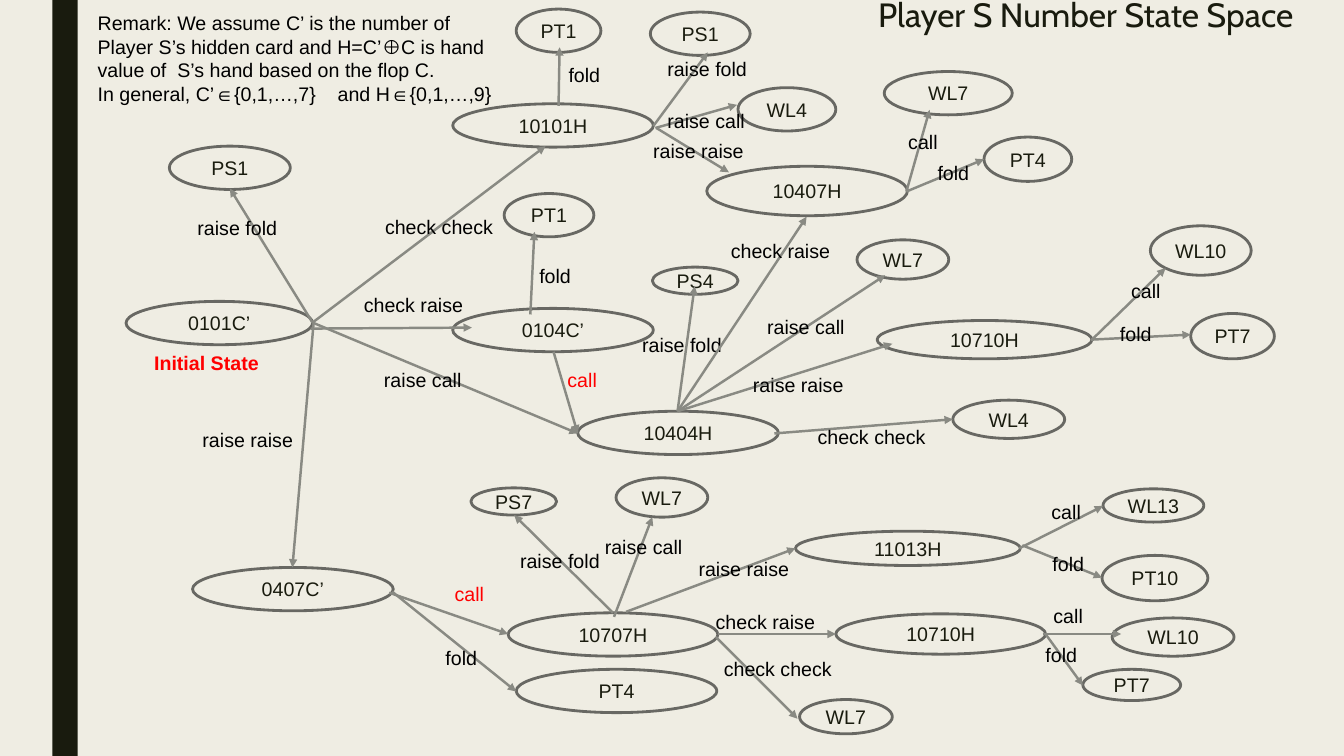
from pptx import Presentation
from pptx.dml.color import RGBColor
from pptx.enum.shapes import MSO_CONNECTOR, MSO_SHAPE
from pptx.enum.text import MSO_ANCHOR, MSO_AUTO_SIZE, PP_ALIGN
from pptx.oxml.ns import qn
from pptx.util import Inches, Pt
from lxml import etree

ELLIPSE, RECTANGLE = MSO_SHAPE.OVAL, MSO_SHAPE.RECTANGLE
STRAIGHT = MSO_CONNECTOR.STRAIGHT
TOP, MIDDLE = MSO_ANCHOR.TOP, MSO_ANCHOR.MIDDLE
LEFT, CENTER = PP_ALIGN.LEFT, PP_ALIGN.CENTER
NO_AUTOFIT = MSO_AUTO_SIZE.NONE
DARK, BLACK, RED = "191B0E", "000000", "FF0000"
OUTLINE, ARROW, BACKGROUND = "686863", "898A83", "EFEDE3"


def color(hex_string):
    return RGBColor.from_string(hex_string)


def write(shape, lines, font_color, alignment=LEFT, bold=False):
    """Fill a shape with 14 pt Arial paragraphs that do not wrap."""
    frame = shape.text_frame
    frame.word_wrap = False
    frame.text = "\n".join(lines)
    for paragraph in frame.paragraphs:
        paragraph.alignment = alignment
        paragraph.font.name = "Arial"
        paragraph.font.size = Pt(14)
        paragraph.font.bold = bold
        paragraph.font.color.rgb = color(font_color)


presentation = Presentation()
presentation.slide_width = Inches(13.33)
presentation.slide_height = Inches(7.5)
slide = presentation.slides.add_slide(presentation.slide_layouts[5])
slide.background.fill.solid()
slide.background.fill.fore_color.rgb = color(BACKGROUND)
shapes = slide.shapes

# Side bar
bar = shapes.add_shape(RECTANGLE, Inches(0.52), 0, Inches(0.25), Inches(7.5))
bar.shadow.inherit = False
bar.fill.solid()
bar.fill.fore_color.rgb = color(DARK)
bar.line.fill.background()

# Title
title = shapes.title
title.left, title.top = Inches(8.61), Inches(-0.06)
title.width, title.height = Inches(4.82), Inches(0.67)
title.text_frame.text = "Player S Number State Space"
title.text_frame.vertical_anchor = TOP
title.text_frame.auto_size = NO_AUTOFIT
heading = title.text_frame.paragraphs[0]
heading.alignment = LEFT
heading.line_spacing = 0.89
heading.font.name = "Cabin"
heading.font.size = Pt(24)
heading.font.color.rgb = color(DARK)

# States: name, left, top, width, height
states = [
    ("0101C’", 1.25, 2.99, 1.85, 0.43),
    ("PS1", 1.68, 1.45, 1.2, 0.43),
    ("10101H", 4.49, 1.03, 1.99, 0.43),
    ("0104C’", 4.49, 3.06, 1.99, 0.43),
    ("10404H", 5.73, 4.08, 1.99, 0.43),
    ("0407C’", 1.91, 5.63, 1.99, 0.43),
    ("PT1", 5, 1.92, 0.89, 0.43),
    ("PT1", 5.12, 0.09, 0.84, 0.43),
    ("PS1", 6.45, 0.12, 0.99, 0.43),
    ("WL4", 7.32, 0.87, 0.97, 0.43),
    ("10407H", 7.01, 1.65, 1.99, 0.49),
    ("WL7", 8.77, 0.71, 1.27, 0.43),
    ("PT4", 9.76, 1.36, 0.87, 0.44),
    ("PS4", 6.47, 2.65, 0.85, 0.27),
    ("WL7", 8.5, 2.38, 0.91, 0.39),
    ("10710H", 8.7, 3.18, 2.13, 0.38),
    ("WL4", 9.45, 3.97, 1.11, 0.38),
    ("WL10", 11.41, 2.24, 1, 0.49),
    ("PT7", 11.81, 3.11, 0.83, 0.45),
    ("10707H", 5.04, 6.08, 2.08, 0.43),
    ("PT4", 5.12, 6.64, 1.99, 0.43),
    ("PS7", 4.67, 4.84, 0.85, 0.27),
    ("WL7", 6.11, 4.74, 0.91, 0.39),
    ("11013H", 7.89, 5.27, 2.23, 0.34),
    ("10710H", 8.29, 6.09, 2.08, 0.4),
    ("WL7", 7.93, 6.94, 0.92, 0.34),
    ("WL13", 10.94, 4.85, 1, 0.33),
    ("PT10", 10.93, 5.51, 1.05, 0.45),
    ("WL10", 11.03, 6.13, 1.21, 0.38),
    ("PT7", 10.74, 6.64, 0.97, 0.31),
]
for name, *box in states:
    state = shapes.add_shape(ELLIPSE, *map(Inches, box))
    state.shadow.inherit = False
    state.fill.background()
    state.line.color.rgb = color(OUTLINE)
    state.line.width = Pt(2)
    state.text_frame.vertical_anchor = MIDDLE
    write(state, [name], DARK, CENTER)

# Transitions: arrow start, arrow end, action, label left and top, label colour
transitions = [
    (3.1, 3.2, 2.28, 1.87, "raise fold", 1.86, 2.09, BLACK),
    (3.1, 3.2, 5.41, 1.45, "check check", 3.72, 2.08, BLACK),
    (3.08, 3.26, 4.68, 3.25, "check raise", 3.51, 2.86, BLACK),
    (3.1, 3.2, 5.73, 4.3, "raise call", 3.71, 3.6, BLACK),
    (3.11, 3.21, 2.9, 5.63, "raise raise", 1.91, 4.2, BLACK),
    (5.26, 3.12, 5.3, 2.3, "fold", 5.25, 2.57, BLACK),
    (5.49, 3.49, 5.73, 4.3, "call", 5.53, 3.6, RED),
    (3.86, 5.88, 5.04, 6.29, "call", 4.41, 5.72, RED),
    (3.89, 5.87, 5.12, 6.86, "fold", 4.32, 6.36, BLACK),
    (5.54, 1.05, 5.55, 0.47, "fold", 5.54, 0.58, BLACK),
    (6.48, 1.25, 7.02, 0.52, "raise fold", 6.52, 0.52, BLACK),
    (6.5, 1.27, 7.31, 1.04, "raise call", 6.52, 1.03, BLACK),
    (6.51, 1.27, 7.23, 1.71, "raise raise", 6.38, 1.33, BLACK),
    (8.99, 1.9, 9.22, 1.09, "call", 8.91, 1.24, BLACK),
    (8.99, 1.9, 9.76, 1.58, "fold", 9.2, 1.55, BLACK),
    (6.72, 4.08, 6.89, 2.84, "raise fold", 6.27, 3.25, BLACK),
    (6.72, 4.08, 8, 2.15, "check raise", 7.15, 2.32, BLACK),
    (6.72, 4.08, 8.78, 2.73, "raise call", 7.51, 3.08, BLACK),
    (6.72, 4.08, 8.85, 3.41, "raise raise", 7.37, 3.65, BLACK),
    (7.68, 4.3, 9.45, 4.16, "check check", 8.01, 4.17, BLACK),
    (10.83, 3.37, 11.56, 2.66, "call", 11.12, 2.72, BLACK),
    (10.82, 3.37, 11.81, 3.32, "fold", 11.01, 3.14, BLACK),
    (6.08, 6.08, 5.1, 5.11, "raise fold", 5.06, 5.4, BLACK),
    (6.09, 6.12, 6.47, 5.13, "raise call", 5.9, 5.26, BLACK),
    (6.21, 6.07, 7.89, 5.44, "raise raise", 6.83, 5.48, BLACK),
    (7.12, 6.29, 8.29, 6.29, "check raise", 7, 6, BLACK),
    (7.1, 6.32, 7.91, 7.13, "check check", 7.08, 6.47, BLACK),
    (10.11, 5.44, 10.94, 5.02, "call", 10.33, 4.91, BLACK),
    (10.14, 5.41, 10.93, 5.73, "fold", 10.34, 5.43, BLACK),
    (10.34, 6.29, 11.12, 6.29, "call", 10.35, 5.94, BLACK),
    (10.37, 6.29, 10.74, 6.8, "fold", 10.27, 6.33, BLACK),
]
label_widths = {"call": 0.5, "fold": 0.52, "raise call": 0.98, "raise fold": 1,
                "raise raise": 1.1, "check raise": 1.24, "check check": 1.32}
for *ends, action, left, top, label_color in transitions:
    arrow = shapes.add_connector(STRAIGHT, *map(Inches, ends))
    arrow.line.color.rgb = color(ARROW)
    arrow.line.width = Pt(1.75)
    properties = arrow._element.spPr
    etree.SubElement(properties.find(qn("a:ln")), qn("a:tailEnd"), type="triangle")
    etree.SubElement(properties, qn("a:effectLst"))
    label = shapes.add_textbox(Inches(left), Inches(top),
                               Inches(label_widths[action]), Inches(0.34))
    write(label, [action], label_color)

# Initial state caption
caption = shapes.add_textbox(Inches(1.43), Inches(3.43), Inches(1.25), Inches(0.34))
write(caption, ["Initial State"], RED, bold=True)

# Remark, with a tab stop for the gap in its last line
remark = shapes.add_textbox(Inches(0.87), Inches(0.06), Inches(4.18), Inches(1.04))
write(remark, [
    "Remark: We assume C’ is the number of",
    "Player S’s hidden card and H=C’⊕C is hand",
    "value of  S’s hand based on the flop C.",
    "In general, C’∈{0,1,…,7}\tand H∈{0,1,…,9}",
], BLACK)
last_line = remark.text_frame.paragraphs[-1]._p.get_or_add_pPr()
tab_list = etree.Element(qn("a:tabLst"))
etree.SubElement(tab_list, qn("a:tab"), pos=str(Inches(2.38)), algn="l")
last_line.insert(0, tab_list)

presentation.save("out.pptx")
